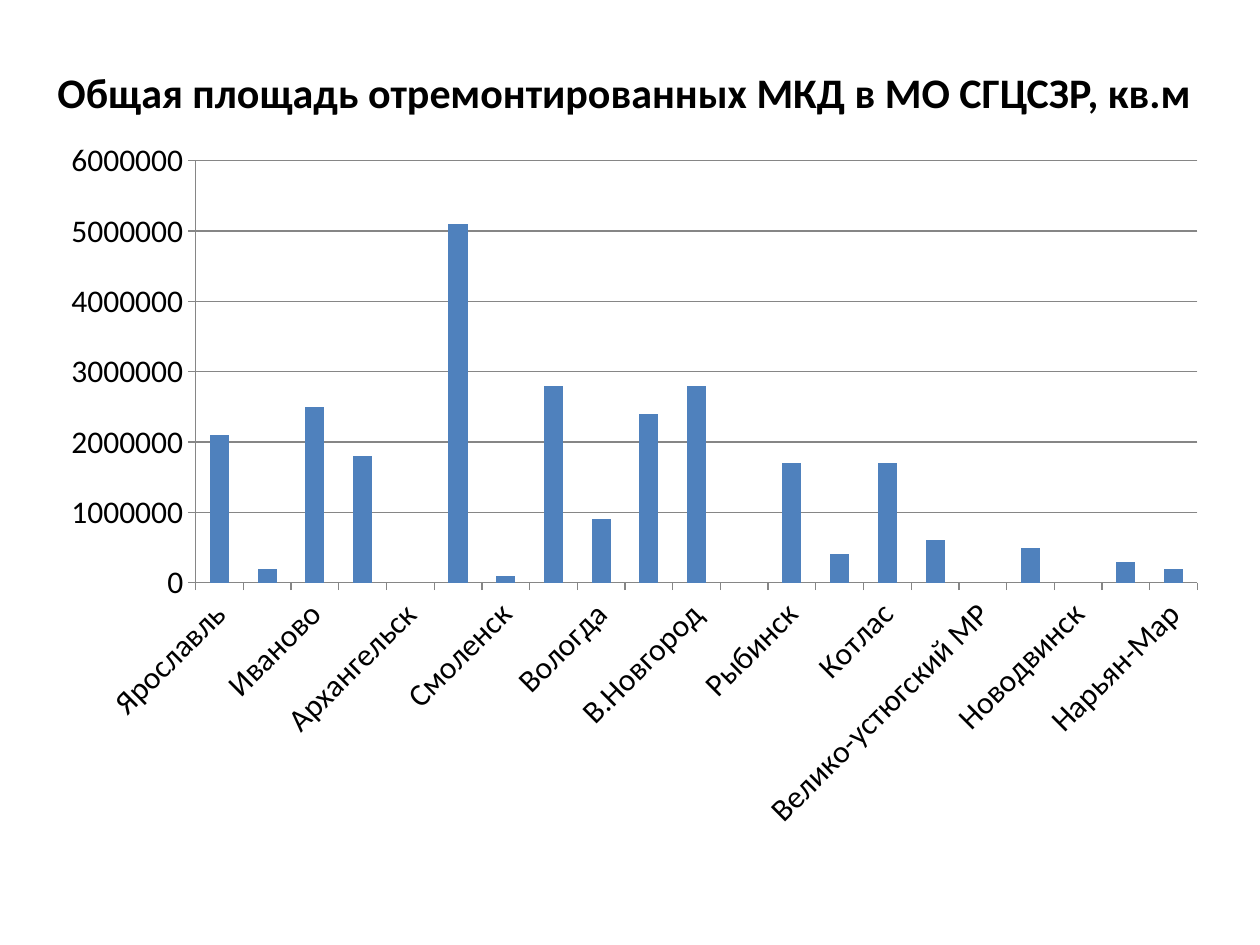
from lxml import etree
from pptx import Presentation
from pptx import util as u
from pptx.chart import data
from pptx.dml.color import RGBColor
from pptx.enum import chart as ch, text
from pptx.oxml.ns import qn

THEME = dict(font="Calibri", ink="000000", bar="4F81BD", grid="868686", title=24, label=18)

AREAS = {
    "Ярославль": 2100000, "Калининград": 200000, "Иваново": 2500000,
    "Тверь": 1800000, "Архангельск": None, "Владимир": 5100000,
    "Смоленск": 100000, "Череповец": 2800000, "Вологда": 900000,
    "Кострома": 2400000, "В.Новгород": 2800000, "Псков": None,
    "Рыбинск": 1700000, "Северодвинск": 400000, "Котлас": 1700000,
    "Тихвинский МР": 600000, "Велико-устюгский МР": None,
    "Старая Русса": 500000, "Новодвинск": None, "Коряжма": 300000,
    "Нарьян-Мар": 200000,
}


def write(tf, content, size, bold=False, align=text.PP_ALIGN.CENTER):
    p = tf.paragraphs[0]
    p.alignment = align
    r = p.add_run()
    r.text = content
    r.font.name = THEME["font"]
    r.font.size = u.Pt(size)
    r.font.bold = bold
    r.font.color.rgb = RGBColor.from_string(THEME["ink"])


prs = Presentation()
prs.slide_width, prs.slide_height = u.Inches(10), u.Inches(7.5)
W, H = prs.slide_width, prs.slide_height
s = prs.slides.add_slide(prs.slide_layouts[5])

sp = s.shapes.title
sp.left, sp.top, sp.width, sp.height = int(W * 0.023), int(H * 0.04), int(W * 0.945), int(H / 6)
tf = sp.text_frame
tf.word_wrap = True
tf.auto_size = text.MSO_AUTO_SIZE.NONE
tf.vertical_anchor = text.MSO_ANCHOR.MIDDLE
tf.margin_bottom = int(H * 0.06)
write(tf, "Общая площадь отремонтированных МКД в МО СГЦСЗР, кв.м", THEME["title"], bold=True)

cd = data.CategoryChartData()
cd.categories = list(AREAS)
cd.add_series("Series 1", list(AREAS.values()))
chart = s.shapes.add_chart(
    ch.XL_CHART_TYPE.COLUMN_STACKED,
    int(W * 0.039), int(H * 0.136), int(W * 0.93), int(H * 0.757), cd,
).chart
chart.has_legend = False
chart.has_title = False
chart.font.name = THEME["font"]
chart.font.size = u.Pt(THEME["label"])
chart.font.color.rgb = RGBColor.from_string(THEME["ink"])

plot = chart.plots[0]
plot.gap_width = 150
plot.overlap = 100
plot.vary_by_categories = False
fill = plot.series[0].format.fill
fill.solid()
fill.fore_color.rgb = RGBColor.from_string(THEME["bar"])

cat, val = chart.category_axis, chart.value_axis
val.minimum_scale, val.maximum_scale, val.major_unit = 0, 6000000, 1000000
val.has_major_gridlines = True
for axis in (cat, val):
    axis.major_tick_mark = ch.XL_TICK_MARK.OUTSIDE
    axis.minor_tick_mark = ch.XL_TICK_MARK.NONE
    axis.tick_labels.font.size = u.Pt(THEME["label"])
for part in (cat, val, val.major_gridlines):
    part.format.line.color.rgb = RGBColor.from_string(THEME["grid"])
    part.format.line.width = u.Pt(0.75)
cat._element.find(qn("c:txPr")).find(qn("a:bodyPr")).set("rot", "-2700000")

area = chart._chartSpace.chart.plotArea
layout = area.find(qn("c:layout"))
if layout is None:
    layout = etree.Element(qn("c:layout"))
    area.insert(0, layout)
manual = etree.SubElement(layout, qn("c:manualLayout"))
for tag, value in (("layoutTarget", "inner"), ("xMode", "edge"), ("yMode", "edge"),
                   ("x", "0.125"), ("y", "0.045"), ("w", "0.855"), ("h", "0.59")):
    etree.SubElement(manual, qn("c:" + tag)).set("val", value)

prs.save("out.pptx")
